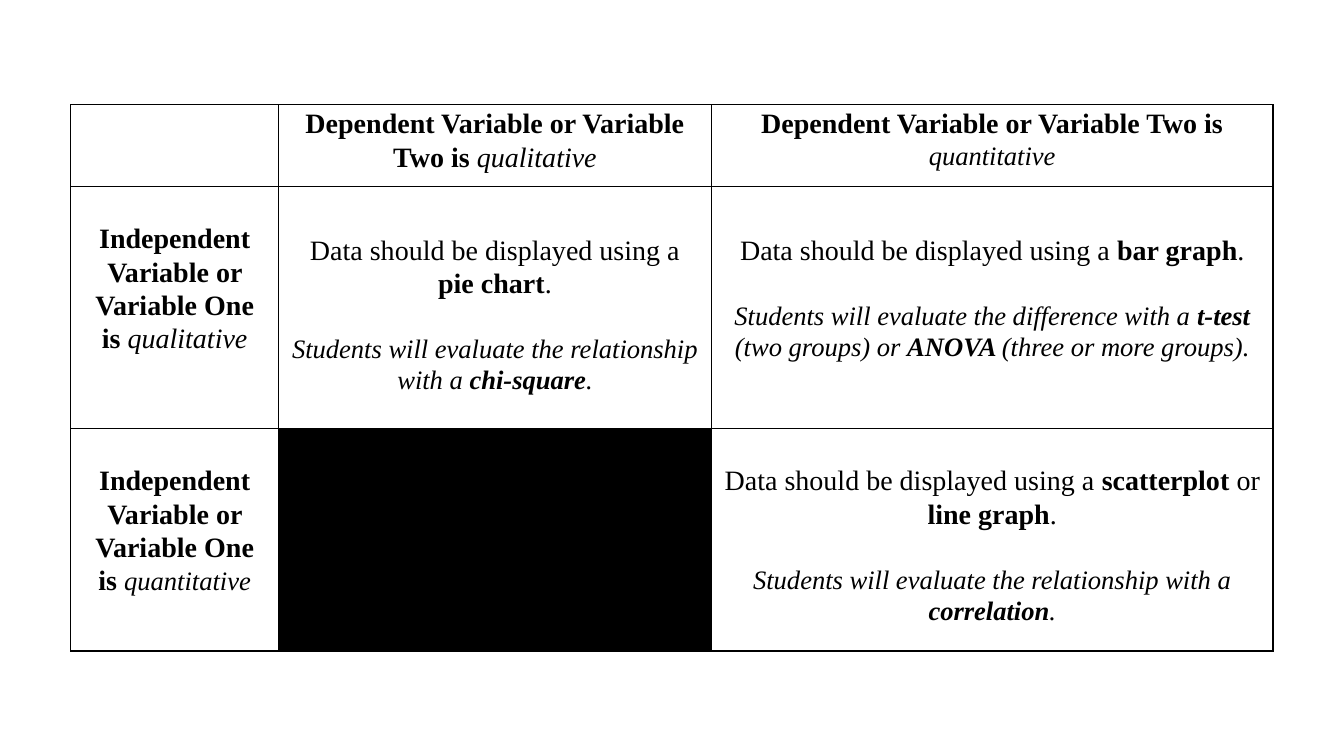
from dataclasses import dataclass
from lxml.etree import SubElement as Sub
from pptx import Presentation as Pres
from pptx.dml.color import RGBColor as RGB
from pptx.enum.text import PP_ALIGN as Align
from pptx.oxml.ns import qn
from pptx.util import Pt


@dataclass(frozen=True)
class Theme:
    ink: str = "000000"
    font: str = "Times New Roman"
    main: int = 20
    note: int = 19
    rule: int = 1
    line: float = 1.07
    gap: float = 23.8


look = Theme()
COLS = (148.4, 309.2, 401.2)
ROWS = (58.3, 172.8, 159.1)

# Each run is text, style letters (b bold, i italic, s small)
DEP = ("Dependent Variable or Variable Two is ", "b")
IND = ("Independent Variable or Variable One is ", "b")
SHOW = ("Data should be displayed using a ", "")
REL = ("Students will evaluate the relationship with a ", "is")
DIFF = ("Students will evaluate the difference with a ", "is")
QUAL, QUANT = ("qualitative", "i"), ("quantitative", "is")
DOT, END = (".", ""), (".", "is")

# Each cell is a list of paragraphs; None marks the blocked cell
GRID = [
    [[], [[DEP, QUAL]], [[DEP, QUANT]]],
    [
        [[IND, QUAL]],
        [[SHOW, ("pie chart", "b"), DOT],
         [REL, ("chi-square", "bis"), END]],
        [[SHOW, ("bar graph", "b"), DOT],
         [DIFF, ("t-test", "bis"), (" (two groups) or ", "is"),
          ("ANOVA ", "bis"), ("(three or more groups).", "is")]],
    ],
    [
        [[IND, QUANT]],
        None,
        [[SHOW, ("scatterplot ", "b"), ("or", ""), (" line graph", "b"), DOT],
         [REL, ("correlation", "bis"), END]],
    ],
]

# Space above the text of each cell, by row
TOPS = [
    (0, 0, 0),
    (look.gap, look.gap + 8, look.gap + 8),
    (look.gap, 0, look.gap),
]


def assign(item, vals):
    for name, val in vals.items():
        setattr(item, name, val)


def add_run(para, text, style):
    run = para.add_run()
    run.text = text
    assign(run.font, {
        "name": look.font,
        "size": Pt(look.note if "s" in style else look.main),
        "bold": "b" in style,
        "italic": "i" in style,
    })
    run.font.color.rgb = RGB.from_string(look.ink)


def add_text(cell, paras):
    frame = cell.text_frame
    for num, runs in enumerate(paras):
        para = frame.add_paragraph() if num else frame.paragraphs[0]
        assign(para, {
            "alignment": Align.CENTER,
            "line_spacing": look.line,
            "space_before": Pt(look.gap if num else 0),
        })
        for text, style in runs:
            add_run(para, text, style)


def add_rules(cell):
    props = cell._tc.get_or_add_tcPr()
    for num, side in enumerate(("lnL", "lnR", "lnT", "lnB")):
        line = props.makeelement(qn(f"a:{side}"), {"w": str(Pt(look.rule))})
        fill = Sub(line, qn("a:solidFill"))
        Sub(fill, qn("a:srgbClr"), val=look.ink)
        props.insert(num, line)


def fill_cell(cell, paras, top):
    assign(cell, {
        "margin_left": Pt(9.4),
        "margin_right": Pt(9.4),
        "margin_top": Pt(1.4 + top),
        "margin_bottom": Pt(0),
    })
    if paras is None:
        cell.fill.solid()
        cell.fill.fore_color.rgb = RGB.from_string(look.ink)
    else:
        cell.fill.background()
        add_text(cell, paras)
    add_rules(cell)


def add_grid(slide, left, top):
    table = slide.shapes.add_table(
        len(ROWS), len(COLS), Pt(left), Pt(top),
        Pt(sum(COLS)), Pt(sum(ROWS))).table
    assign(table, {"first_row": False, "horz_banding": False})
    for col, wide in zip(table.columns, COLS):
        col.width = Pt(wide)
    for row, high, paras, tops in zip(table.rows, ROWS, GRID, TOPS):
        row.height = Pt(high)
        for cell, text, gap in zip(row.cells, paras, tops):
            fill_cell(cell, text, gap)


def main():
    deck = Pres()
    assign(deck, {"slide_width": Pt(960), "slide_height": Pt(540)})
    slide = deck.slides.add_slide(deck.slide_layouts[6])
    # Chart choice by type of variable
    add_grid(slide, 50.6, 74.9)
    deck.save("out.pptx")


if __name__ == "__main__":
    main()
